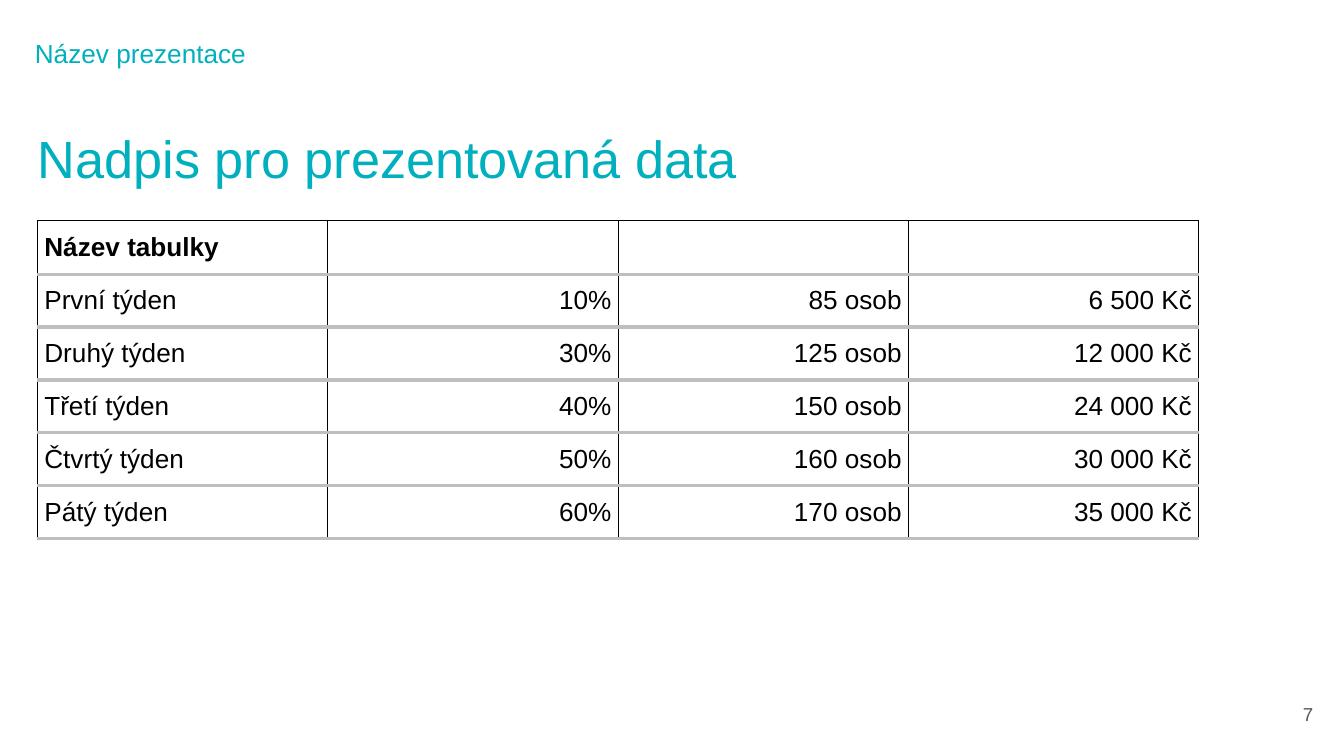
from typing import NamedTuple

from lxml.etree import SubElement
from pptx import Presentation
from pptx.dml.color import RGBColor
from pptx.enum.text import MSO_ANCHOR as Anchor, PP_ALIGN as Align
from pptx.oxml.ns import qn
from pptx.util import Inches, Pt

COLORS = {
    "accent": "00B0BE",
    "text": "000000",
    "number": "585858",
    "rule": "BCBEC0",
    "paper": "FFFFFF",
}


class Label(NamedTuple):
    text: str
    box: tuple[float, float, float, float]
    margins: tuple[float, float, float, float]
    size: int
    color: str
    align: Align = Align.LEFT
    anchor: Anchor = Anchor.TOP


class Border(NamedTuple):
    side: str
    color: str
    width: float


TITLE = Label("Nadpis pro prezentovaná data", (0.28, 0.84, 8.27, 0.63),
              (0, 0.1, 0.1, 0.1), 28, "accent")
DECK_NAME = Label("Název prezentace", (0.13, 0.28, 8.27, 0.39),
                  (0, 0, 0.1, 0), 14, "accent")
PAGE_NUMBER = Label("7", (9.5, 5.14, 0.37, 0.35), (0.1, 0.1, 0.1, 0.1),
                    10, "number", Align.RIGHT, Anchor.MIDDLE)

ROWS = [
    ("Název tabulky", "", "", ""),
    ("První týden", "10%", "85 osob", "6 500 Kč"),
    ("Druhý týden", "30%", "125 osob", "12 000 Kč"),
    ("Třetí týden", "40%", "150 osob", "24 000 Kč"),
    ("Čtvrtý týden", "50%", "160 osob", "30 000 Kč"),
    ("Pátý týden", "60%", "170 osob", "35 000 Kč"),
]
SLIDE_WIDTH = 10
SLIDE_HEIGHT = SLIDE_WIDTH * 9 / 16
TABLE_WIDTH, TABLE_HEIGHT = 8.64, 2.36


def set_all(target, values: dict) -> None:
    for name, value in values.items():
        setattr(target, name, value)


def set_margins(target, margins: tuple[float, ...]) -> None:
    sides = ("margin_left", "margin_top", "margin_right", "margin_bottom")
    set_all(target, dict(zip(sides, map(Inches, margins))))


def write(paragraph, text: str, size: int, color: str, align: Align,
          bold: bool = False) -> None:
    paragraph.alignment = align
    run = paragraph.add_run()
    run.text = text
    set_all(run.font, {"name": "Arial", "size": Pt(size), "bold": bold})
    run.font.color.rgb = RGBColor.from_string(COLORS[color])


def fill_label(shape, label: Label):
    sides = ("left", "top", "width", "height")
    set_all(shape, dict(zip(sides, map(Inches, label.box))))
    frame = shape.text_frame
    set_all(frame, {"word_wrap": True, "vertical_anchor": label.anchor})
    set_margins(frame, label.margins)
    paragraph = frame.paragraphs[0]
    write(paragraph, label.text, label.size, label.color, label.align)
    return paragraph


def add_label(slide, label: Label):
    return fill_label(slide.shapes.add_textbox(0, 0, 0, 0), label)


def draw_border(cell, border: Border) -> None:
    line = SubElement(cell._tc.get_or_add_tcPr(), qn(f"a:ln{border.side}"),
                      w=str(Pt(border.width)))
    SubElement(SubElement(line, qn("a:solidFill")), qn("a:srgbClr"),
               val=COLORS[border.color])


def add_week_table(slide) -> None:
    columns = len(ROWS[0])
    table = slide.shapes.add_table(
        len(ROWS), columns, Inches(0.28), Inches(1.64),
        Inches(TABLE_WIDTH), Inches(TABLE_HEIGHT)).table
    set_all(table, {"first_row": False, "horz_banding": False})
    for r, values in enumerate(ROWS):
        is_header = r == 0
        top = Border("T", "text", 0.5) if is_header else Border("T", "rule", 2)
        borders = [Border("L", "text", 0.5), Border("R", "text", 0.5),
                   top, Border("B", "rule", 2)]
        for c, value in enumerate(values):
            cell = table.cell(r, c)
            for border in borders:
                draw_border(cell, border)
            if is_header:
                cell.fill.background()
            else:
                cell.fill.solid()
                cell.fill.fore_color.rgb = RGBColor.from_string(COLORS["paper"])
            cell.vertical_anchor = Anchor.MIDDLE
            set_margins(cell, (0.05, 0.05, 0.05, 0.05))
            if value:
                write(cell.text_frame.paragraphs[0], value, 14, "text",
                      Align.RIGHT if c else Align.LEFT, is_header)


def main() -> None:
    deck = Presentation()
    set_all(deck, {"slide_width": Inches(SLIDE_WIDTH),
                   "slide_height": Inches(SLIDE_HEIGHT)})
    slide = deck.slides.add_slide(deck.slide_layouts[5])
    add_label(slide, PAGE_NUMBER)
    fill_label(slide.shapes.title, TITLE)
    deck_name = add_label(slide, DECK_NAME)
    for name, inches in {"marL": 0.38, "indent": -0.25}.items():
        deck_name._p.get_or_add_pPr().set(name, str(Inches(inches)))
    add_week_table(slide)
    deck.save("out.pptx")


if __name__ == "__main__":
    main()
